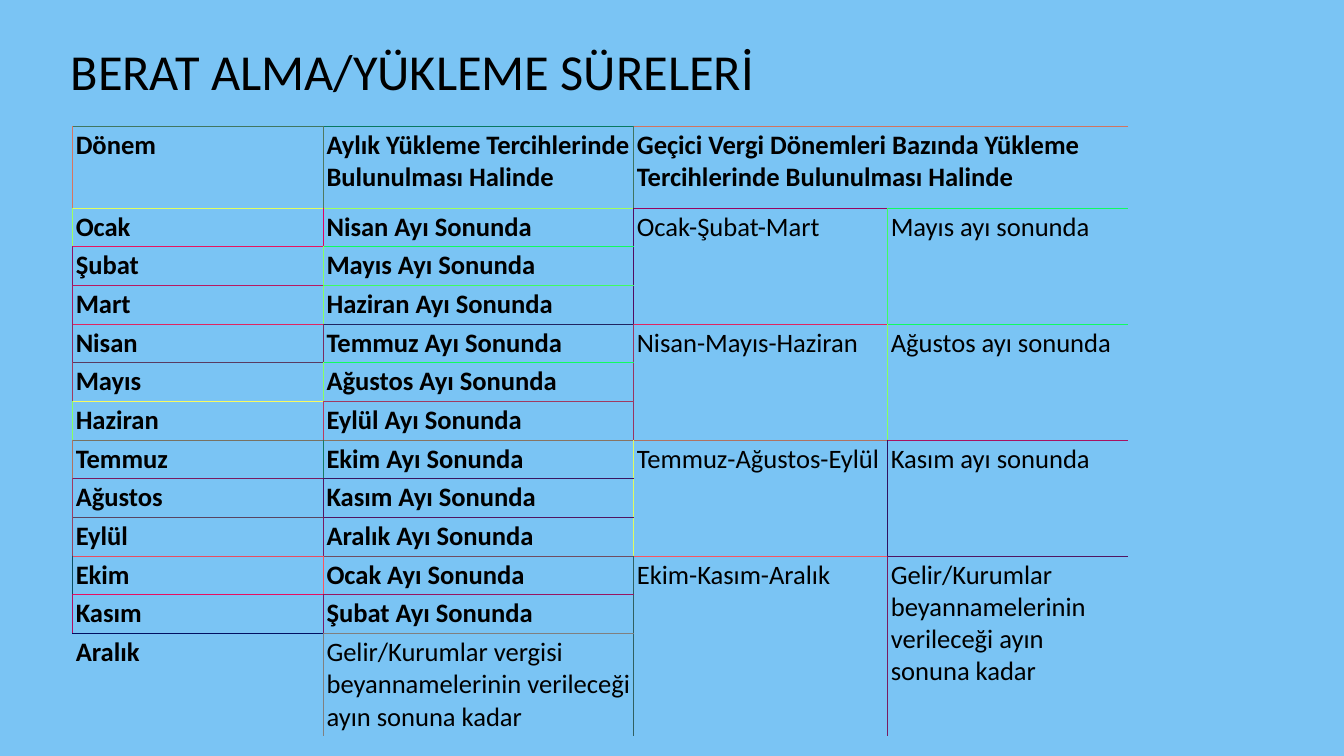
from dataclasses import dataclass

from lxml import etree
from pptx import Presentation
from pptx.dml.color import RGBColor
from pptx.enum.text import MSO_ANCHOR, PP_ALIGN
from pptx.oxml.ns import qn
from pptx.util import Cm, Pt

CENTER = PP_ALIGN.CENTER
MIDDLE = MSO_ANCHOR.MIDDLE


@dataclass(frozen=True)
class Theme:
    background: str = "7AC4F4"
    text: str = "000000"
    font: str = "Calibri"
    title_size: float = 36
    table_size: float = 19
    border_width: float = 0.5


THEME = Theme()
NO_LINE = "-"
MONTHS_PER_QUARTER = 3

HEADERS = [
    "Dönem",
    "Aylık Yükleme Tercihlerinde Bulunulması Halinde",
    "Geçici Vergi Dönemleri Bazında Yükleme Tercihlerinde Bulunulması Halinde",
]
MONTHS = [
    ("Ocak", "Nisan Ayı Sonunda"),
    ("Şubat", "Mayıs Ayı Sonunda"),
    ("Mart", "Haziran Ayı Sonunda"),
    ("Nisan", "Temmuz Ayı Sonunda"),
    ("Mayıs", "Ağustos Ayı Sonunda"),
    ("Haziran", "Eylül Ayı Sonunda"),
    ("Temmuz", "Ekim Ayı Sonunda"),
    ("Ağustos", "Kasım Ayı Sonunda"),
    ("Eylül", "Aralık Ayı Sonunda"),
    ("Ekim", "Ocak Ayı Sonunda"),
    ("Kasım", "Şubat Ayı Sonunda"),
    ("Aralık", "Gelir/Kurumlar vergisi beyannamelerinin verileceği ayın sonuna kadar"),
]
QUARTERS = [
    ("Ocak-Şubat-Mart", "Mayıs ayı sonunda"),
    ("Nisan-Mayıs-Haziran", "Ağustos ayı sonunda"),
    ("Temmuz-Ağustos-Eylül", "Kasım ayı sonunda"),
    ("Ekim-Kasım-Aralık", "Gelir/Kurumlar beyannamelerinin verileceği ayın sonuna kadar"),
]
COLUMN_WIDTHS = [6.32, 7.82, 6.4, 6.05]
ROW_HEIGHTS = [2.06] + [0.91] * (len(MONTHS) - 1) + [2.51]


def quarter_tops(header_top, *colors):
    edges = [header_top]
    for color in colors[:-1]:
        edges += [color] + [NO_LINE] * (MONTHS_PER_QUARTER - 1)
    return edges + [colors[-1]]


def quarter_sides(header_side, *colors):
    return [header_side] + [color for color in colors for _ in range(MONTHS_PER_QUARTER)]


HORIZONTAL_EDGES = [
    "407761 E0FE60 E81461 B81A61 E02561 583B61 F8FB60 787261 781B61 584461 E84D61 E80E61 000F61 -".split(),
    "087961 A0FF60 10FC60 40FC60 202561 10FC60 A03B61 887461 381661 501661 704D61 981661 808080 -".split(),
    quarter_tops("D07461", "980461", "E02561", "B07361", "F85561", "285661"),
    quarter_tops("D07461", "10FC60", "10FC60", "A81261", "501661", "808080"),
]
VERTICAL_EDGES = [
    "D87561 A0FF60 901261 A81861 902761 A03B61 88FF60 B07361 A03B61 984361 104D61 B00D61 -".split(),
    "507961 E00461 88FF60 88FF60 782D61 88FF60 B83B61 187861 501661 781B61 F85561 781B61 808080".split(),
    quarter_sides("407461", "500D61", "983461", "E0FB60", "306061"),
    quarter_sides(NO_LINE, "40FC60", "88FF60", "301261", "781B61"),
    [NO_LINE] * len(ROW_HEIGHTS),
]


def format_text(paragraph, size, bold=False):
    for run in paragraph.runs:
        run.font.name = THEME.font
        run.font.size = Pt(size)
        run.font.bold = bold
        run.font.color.rgb = RGBColor.from_string(THEME.text)


def add_title(slide, text):
    box = slide.shapes.add_textbox(Cm(0.81), Cm(0.81), Cm(19.18), Cm(2.13))
    frame = box.text_frame
    frame.word_wrap = True
    frame.vertical_anchor = MIDDLE
    frame.text = text
    paragraph = frame.paragraphs[0]
    paragraph.alignment = CENTER
    paragraph.line_spacing = 0.9
    format_text(paragraph, THEME.title_size)


def add_border(cell, side, color):
    properties = cell._tc.get_or_add_tcPr()
    line = etree.SubElement(properties, qn(f"a:ln{side}"), w=str(Pt(THEME.border_width)))
    if color == NO_LINE:
        etree.SubElement(line, qn("a:noFill"))
    else:
        fill = etree.SubElement(line, qn("a:solidFill"))
        etree.SubElement(fill, qn("a:srgbClr"), val=color)


def style_cell(cell, row, column):
    cell.margin_left = cell.margin_right = Cm(0.08)
    cell.margin_top = cell.margin_bottom = Cm(0.08)
    add_border(cell, "L", VERTICAL_EDGES[column][row])
    add_border(cell, "R", VERTICAL_EDGES[column + 1][row])
    add_border(cell, "T", HORIZONTAL_EDGES[column][row])
    add_border(cell, "B", HORIZONTAL_EDGES[column][row + 1])
    cell.fill.background()


def write_cell(cell, text, bold):
    cell.text_frame.text = text
    format_text(cell.text_frame.paragraphs[0], THEME.table_size, bold)


def fill_table(table):
    for column, text in enumerate(HEADERS):
        write_cell(table.cell(0, column), text, True)
    table.cell(0, 2).merge(table.cell(0, 3))
    for row, (month, deadline) in enumerate(MONTHS, start=1):
        write_cell(table.cell(row, 0), month, True)
        write_cell(table.cell(row, 1), deadline, row < len(MONTHS))
    for index, texts in enumerate(QUARTERS):
        first = 1 + index * MONTHS_PER_QUARTER
        for column, text in enumerate(texts, start=2):
            cell = table.cell(first, column)
            cell.merge(table.cell(first + MONTHS_PER_QUARTER - 1, column))
            write_cell(cell, text, False)


def add_deadline_table(slide):
    frame = slide.shapes.add_table(
        len(ROW_HEIGHTS), len(COLUMN_WIDTHS), Cm(1.83), Cm(3.18),
        Cm(sum(COLUMN_WIDTHS)), Cm(sum(ROW_HEIGHTS)),
    )
    table = frame.table
    table.first_row = False
    table.horz_banding = False
    for column, width in zip(table.columns, COLUMN_WIDTHS):
        column.width = Cm(width)
    for row, height in zip(table.rows, ROW_HEIGHTS):
        row.height = Cm(height)
    for row in range(len(ROW_HEIGHTS)):
        for column in range(len(COLUMN_WIDTHS)):
            style_cell(table.cell(row, column), row, column)
    fill_table(table)


def main():
    presentation = Presentation()
    presentation.slide_width = Cm(33.87)
    presentation.slide_height = Cm(19.05)
    slide = presentation.slides.add_slide(presentation.slide_layouts[6])
    slide.background.fill.solid()
    slide.background.fill.fore_color.rgb = RGBColor.from_string(THEME.background)
    add_deadline_table(slide)
    add_title(slide, "BERAT ALMA/YÜKLEME SÜRELERİ")
    presentation.save("out.pptx")


if __name__ == "__main__":
    main()
